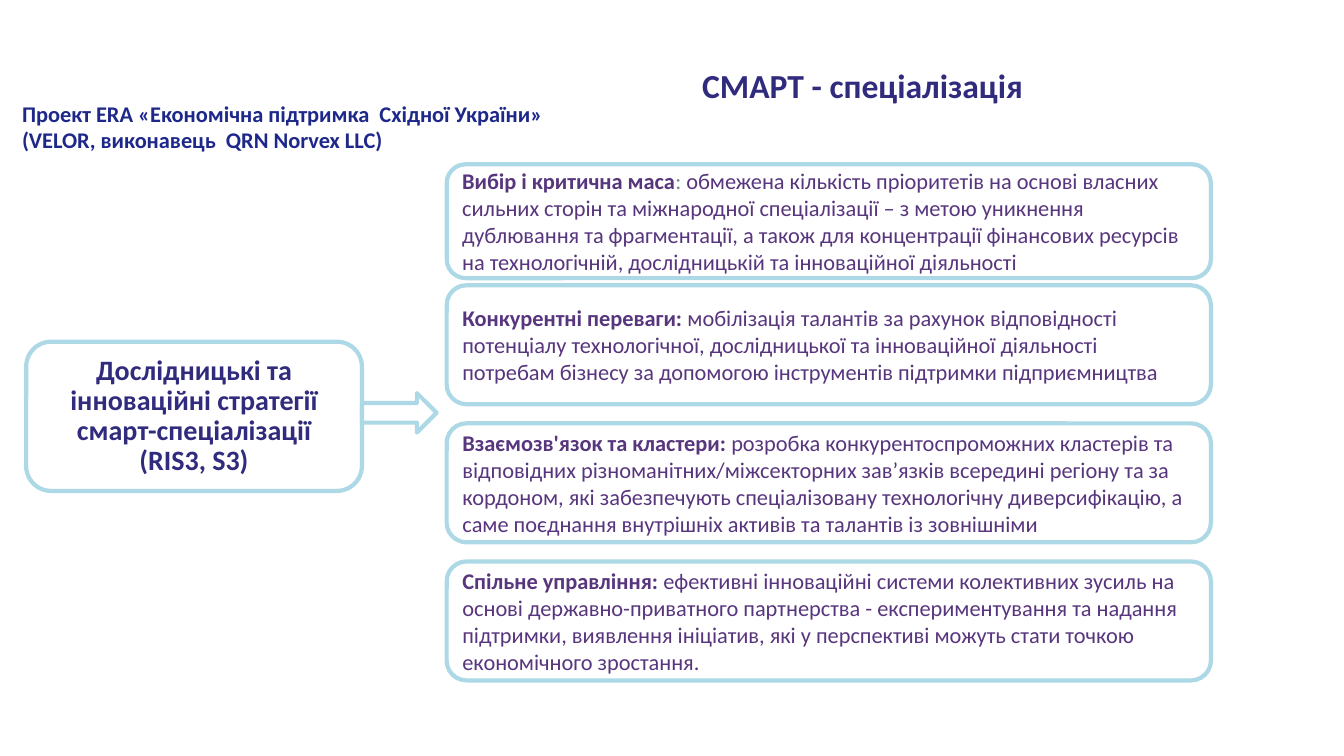
import pptx
import pptx.dml.color
import pptx.enum.shapes
import pptx.enum.text
import pptx.util

Inches = pptx.util.Inches
RGBColor = pptx.dml.color.RGBColor
SHAPE = pptx.enum.shapes.MSO_SHAPE
ALIGN = pptx.enum.text.PP_ALIGN
ANCHOR = pptx.enum.text.MSO_ANCHOR

WHITE = RGBColor(0xFF, 0xFF, 0xFF)
LIGHT_BLUE = RGBColor(0xAD, 0xD8, 0xE6)
PROJECT_BLUE = RGBColor(0x1E, 0x28, 0x8A)
NAVY = RGBColor(0x31, 0x2B, 0x7D)
PURPLE = RGBColor(0x58, 0x36, 0x7E)
GREY = RGBColor(0x77, 0x88, 0x99)


def add_run(paragraph, text, size=16, color=PURPLE, bold=False, font="Calibri"):
    run = paragraph.add_run()
    run.text = text
    run.font.name = font
    run.font.size = pptx.util.Pt(size)
    run.font.bold = bold
    run.font.color.rgb = color


class StrategySlide:
    """Outlined white shapes and bold headings on one slide."""

    def __init__(self, slide, line_color=LIGHT_BLUE, line_width=3):
        self.slide = slide
        self.line_color = line_color
        self.line_width = pptx.util.Pt(line_width)

    def heading(self, lines, left, top, width, height, align=ALIGN.LEFT,
                spacing=1.0, **style):
        box = self.slide.shapes.add_textbox(
            Inches(left), Inches(top), Inches(width), Inches(height))
        frame = box.text_frame
        frame.word_wrap = True
        for index, line in enumerate(lines):
            paragraph = frame.add_paragraph() if index else frame.paragraphs[0]
            paragraph.alignment = align
            paragraph.line_spacing = spacing
            add_run(paragraph, line, bold=True, **style)

    def outline(self, preset, left, top, width, height):
        shape = self.slide.shapes.add_shape(
            preset, Inches(left), Inches(top), Inches(width), Inches(height))
        shape.shadow.inherit = False
        shape.fill.solid()
        shape.fill.fore_color.rgb = WHITE
        shape.line.color.rgb = self.line_color
        shape.line.width = self.line_width
        return shape

    def card(self, left, top, width, height, align=ALIGN.LEFT, spacing=1.0):
        frame = self.outline(SHAPE.ROUNDED_RECTANGLE, left, top, width, height).text_frame
        frame.word_wrap = True
        frame.vertical_anchor = ANCHOR.MIDDLE
        paragraph = frame.paragraphs[0]
        paragraph.alignment = align
        paragraph.line_spacing = spacing
        return paragraph


# Top, height, principle, separator, separator colour, explanation
PRINCIPLES = [
    (1.63, 1.13, "Вибір і критична маса", ": ", GREY,
     "обмежена кількість пріоритетів на основі власних сильних сторін та "
     "міжнародної спеціалізації – з метою уникнення дублювання та фрагментації, "
     "а також для концентрації фінансових ресурсів на технологічній, "
     "дослідницькій та інноваційної діяльності"),
    (2.83, 1.18, "Конкурентні переваги", ": ", PURPLE,
     "мобілізація талантів за рахунок відповідності потенціалу технологічної, "
     "дослідницької та інноваційної діяльності потребам бізнесу за допомогою "
     "інструментів підтримки підприємництва"),
    (4.2, 1.18, "Взаємозв'язок та кластери", ": ", PURPLE,
     "розробка конкурентоспроможних кластерів та відповідних "
     "різноманітних/міжсекторних зав’язків всередині регіону та за кордоном, "
     "які забезпечують спеціалізовану технологічну диверсифікацію, а саме "
     "поєднання внутрішніх активів та талантів із зовнішніми"),
    (5.57, 1.18, "Спільне управління", ": ", PURPLE,
     "ефективні інноваційні системи колективних зусиль на основі "
     "державно-приватного партнерства - експериментування та надання підтримки, "
     "виявлення ініціатив, які у перспективі можуть стати точкою економічного "
     "зростання."),
]


def main():
    deck = pptx.Presentation()
    deck.slide_width = Inches(13.33)
    deck.slide_height = Inches(7.5)
    page = StrategySlide(deck.slides.add_slide(deck.slide_layouts[6]))

    # Project name and title
    page.heading(["Проект ERA «Економічна підтримка  Східної України»",
                  "(VELOR, виконавець  QRN Norvex LLC)"],
                 0.12, 0.94, 8.29, 0.64, color=PROJECT_BLUE)
    page.heading(["СМАРТ - спеціалізація"], 3.59, 0.64, 9.93, 0.99,
                 align=ALIGN.CENTER, spacing=0.9, size=24, color=NAVY)

    # Strategies on the left, with the arrow to their principles
    strategies = page.card(0.26, 3.39, 3.33, 1.48, align=ALIGN.CENTER, spacing=0.9)
    add_run(strategies,
            "Дослідницькі та інноваційні стратегії смарт-спеціалізації (RIS3, S3)",
            size=20, color=NAVY, bold=True)
    page.outline(SHAPE.RIGHT_ARROW, 3.59, 3.9, 0.74, 0.39)

    # Four principles on the right
    for top, height, principle, separator, separator_color, explanation in PRINCIPLES:
        card = page.card(4.43, top, 7.58, height)
        add_run(card, principle, bold=True)
        add_run(card, separator, color=separator_color, bold=separator_color == PURPLE)
        add_run(card, explanation)

    deck.save("out.pptx")


if __name__ == "__main__":
    main()
